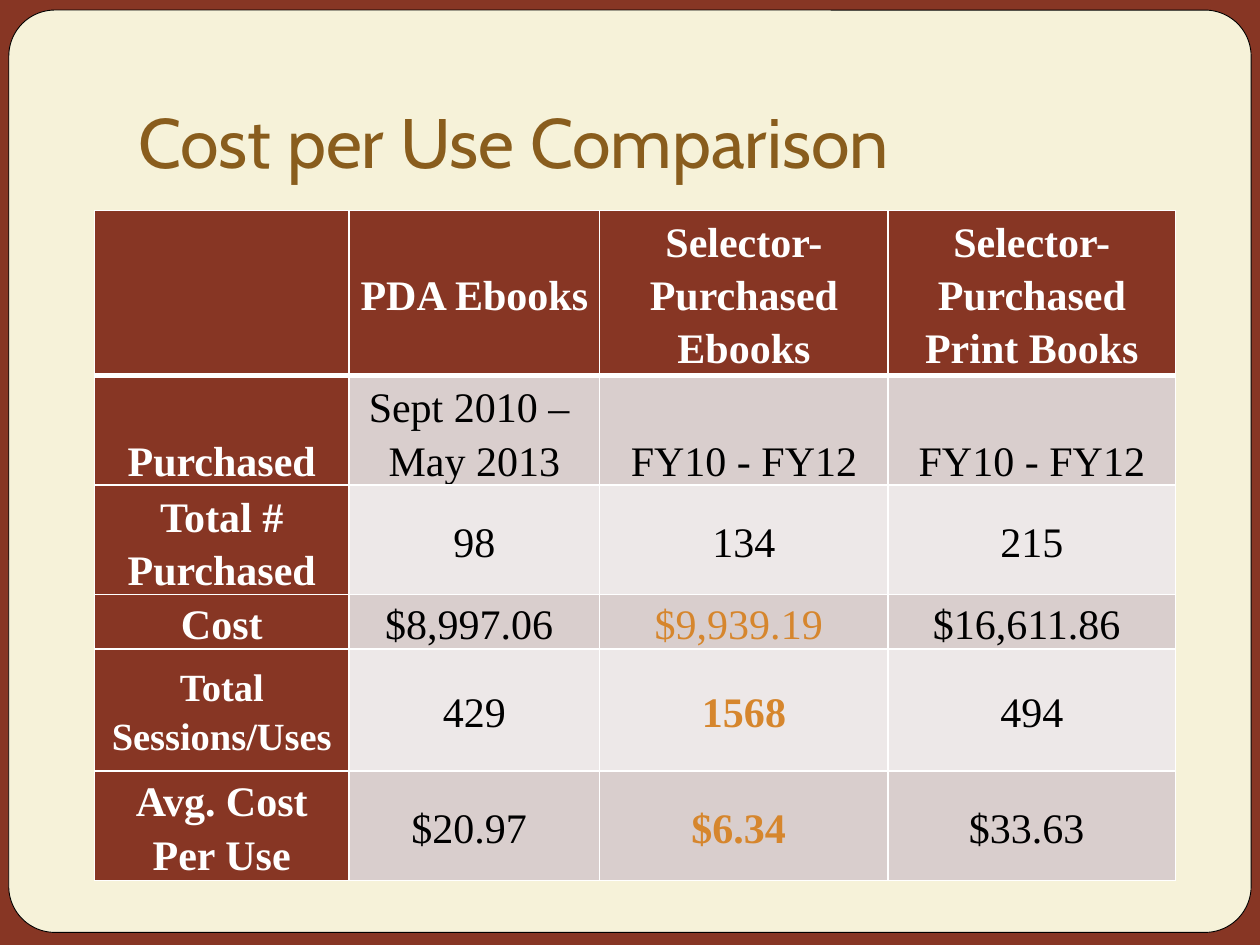
from lxml import etree
from pptx import Presentation
from pptx import util as u
from pptx.dml.color import RGBColor
from pptx.enum import shapes, text
from pptx.oxml import ns

BRICK = RGBColor(0x87, 0x36, 0x24)
CREAM = RGBColor(0xF6, 0xF2, 0xD9)
BROWN = RGBColor(0x89, 0x5D, 0x1D)
ORANGE = RGBColor(0xD6, 0x86, 0x2D)
DARK_BAND = RGBColor(0xD9, 0xCE, 0xCD)
LIGHT_BAND = RGBColor(0xED, 0xE8, 0xE8)
WHITE = RGBColor(0xFF, 0xFF, 0xFF)
BLACK = RGBColor(0, 0, 0)

LEADING = 1.27
COLUMNS = [2.02, 1.99, 2.29, 2.28]
HEIGHTS = [1.31, 0.87, 0.87, 0.43, 0.97, 0.87]
ROWS = [
    ["", "PDA Ebooks", "Selector-Purchased Ebooks", "Selector-Purchased Print Books"],
    ["Purchased", "Sept 2010 – \nMay 2013", "FY10 - FY12", "FY10 - FY12"],
    ["Total # Purchased", "98", "134", "215"],
    ["Cost", "$8,997.06 ", "$9,939.19 ", "$16,611.86 "],
    ["Total Sessions/Uses", "429", "1568", "494"],
    ["Avg. Cost Per Use", "$20.97 ", "$6.34 ", "$33.63 "],
]
BOTTOM_CELLS = {(1, 0), (1, 1), (1, 2), (1, 3), (2, 0)}
ORANGE_CELLS = {(3, 2), (4, 2), (5, 2)}
BOLD_CELLS = {(4, 2), (5, 2)}
SMALL_CELLS = {(4, 0)}


class SlideBuilder:
    """Draws styled elements on the current slide."""

    def __init__(self, slide):
        self.slide = slide
        self.title_font = "Cabin"
        self.table_font = "Times New Roman"

    def panel(self, kind, bounds, fill, line=None):
        box = self.slide.shapes.add_shape(kind, *map(u.Inches, bounds))
        box.shadow.inherit = False
        box.fill.solid()
        box.fill.fore_color.rgb = fill
        if line is None:
            box.line.fill.background()
        else:
            box.line.color.rgb = line
            box.line.width = u.Pt(0.5)
        return box

    def span(self, para, words, font, size, color, bold=False):
        span = para.add_run()
        span.text = words
        span.font.name = font
        span.font.size = u.Pt(size)
        span.font.color.rgb = color
        span.font.bold = bold

    def title(self, words, bounds):
        frame = self.slide.shapes.add_textbox(*map(u.Inches, bounds)).text_frame
        frame.word_wrap = True
        frame.vertical_anchor = text.MSO_ANCHOR.BOTTOM
        frame.margin_bottom = u.Inches(0.1)
        self.span(frame.paragraphs[0], words, self.title_font, 40, BROWN)

    def borders(self, cell, widths):
        properties = cell._tc.get_or_add_tcPr()
        for side, width in widths.items():
            line = etree.SubElement(properties, ns.qn(f"a:ln{side}"), w=str(u.Pt(width)))
            fill = etree.SubElement(line, ns.qn("a:solidFill"))
            etree.SubElement(fill, ns.qn("a:srgbClr"), val=str(WHITE))

    def cell(self, cell, words, row, column):
        place = (row, column)
        heading = row == 0 or column == 0
        self.borders(cell, {"L": 1, "R": 1, "T": 1, "B": 3 if row == 0 else 1})
        cell.fill.solid()
        cell.fill.fore_color.rgb = BRICK if heading else DARK_BAND if row % 2 else LIGHT_BAND
        cell.margin_left = cell.margin_right = u.Inches(0.07)
        cell.margin_top = cell.margin_bottom = 0
        bottom = place in BOTTOM_CELLS
        cell.vertical_anchor = text.MSO_ANCHOR.BOTTOM if bottom else text.MSO_ANCHOR.MIDDLE
        if not words:
            return
        color = WHITE if heading else ORANGE if place in ORANGE_CELLS else BLACK
        size = 22 if place in SMALL_CELLS else 24
        frame = cell.text_frame
        for index, line in enumerate(words.split("\n")):
            para = frame.add_paragraph() if index else frame.paragraphs[0]
            para.alignment = text.PP_ALIGN.CENTER
            para.line_spacing = u.Pt(size * LEADING)
            self.span(para, line, self.table_font, size, color, heading or place in BOLD_CELLS)

    def table(self, rows, left, top):
        bounds = (left, top, sum(COLUMNS), sum(HEIGHTS))
        table = self.slide.shapes.add_table(
            len(rows), len(COLUMNS), *map(u.Inches, bounds)
        ).table
        for column, width in zip(table.columns, COLUMNS):
            column.width = u.Inches(width)
        for row, height in zip(table.rows, HEIGHTS):
            row.height = u.Inches(height)
        for row, values in enumerate(rows):
            for column, words in enumerate(values):
                self.cell(table.cell(row, column), words, row, column)


def main():
    deck = Presentation()
    deck.slide_width, deck.slide_height = u.Inches(10), u.Inches(7.5)
    page = SlideBuilder(deck.slides.add_slide(deck.slide_layouts[6]))
    page.panel(shapes.MSO_SHAPE.RECTANGLE, (0, 0, 10, 7.5), BRICK)
    card = page.panel(
        shapes.MSO_SHAPE.ROUNDED_RECTANGLE, (0.07, 0.08, 9.86, 7.32), CREAM, BLACK
    )
    card.adjustments[0] = 0.05
    page.title("Cost per Use Comparison", (1, 0.3, 8.5, 1.25))
    page.table(ROWS, 0.75, 1.67)
    deck.save("out.pptx")


if __name__ == "__main__":
    main()
